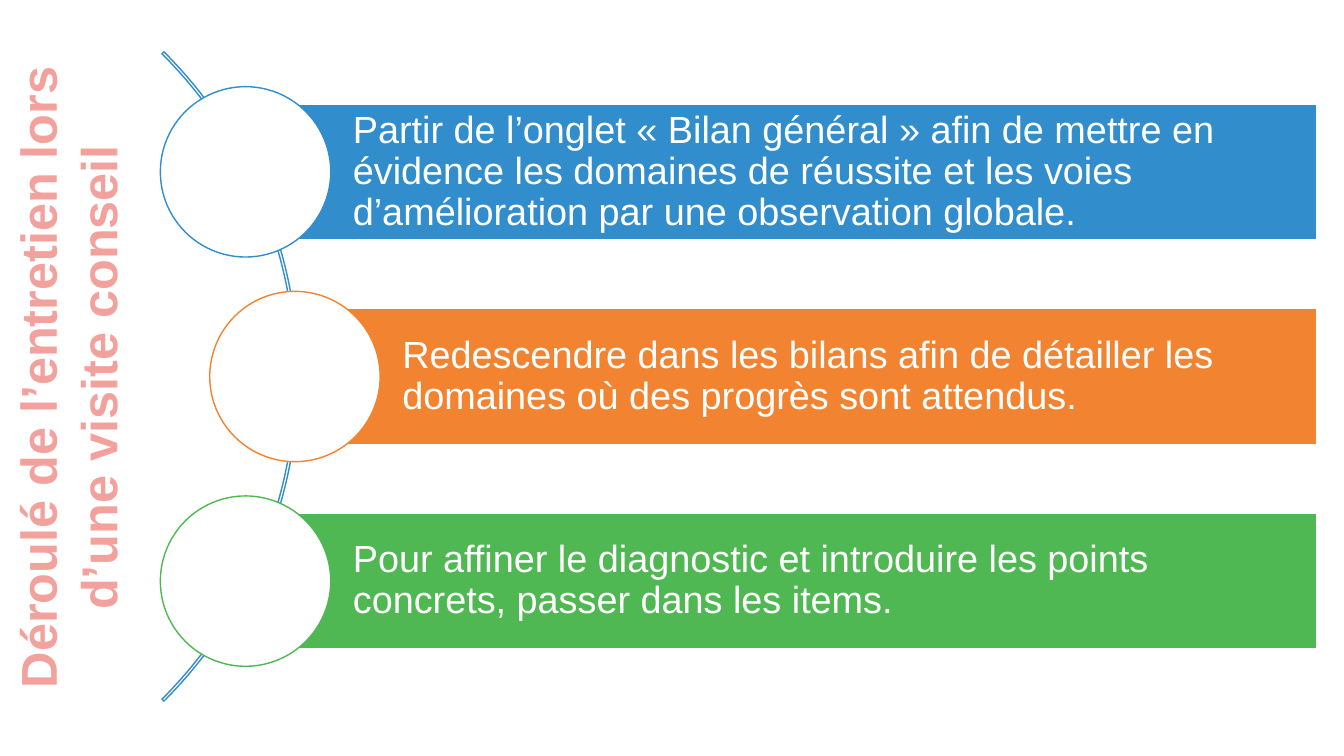
from dataclasses import dataclass

import pptx
import pptx.dml.color
import pptx.enum.shapes
import pptx.enum.text
import pptx.util

SHAPE = pptx.enum.shapes.MSO_SHAPE
ALIGN = pptx.enum.text.PP_ALIGN
ANCHOR = pptx.enum.text.MSO_ANCHOR
EMU_PER_PX = 9144  # 100 px to the inch


@dataclass(frozen=True)
class Theme:
    font: str = "Arial"
    white: str = "FFFFFF"
    title: str = "F3A19D"
    blue: str = "318DCB"
    orange: str = "F28330"
    green: str = "50B852"
    title_size: int = 36
    step_size: int = 27
    line_width: int = 1


def px(length):
    return pptx.util.Emu(length * EMU_PER_PX)


def rgb(colour):
    return pptx.dml.color.RGBColor.from_string(colour)


class SlideBuilder:
    def __init__(self, presentation, theme):
        self.theme = theme
        self.slide = presentation.slides.add_slide(presentation.slide_layouts[6])

    def set_text(self, frame, text, *, size, colour, bold=False, align=ALIGN.LEFT,
                 anchor=ANCHOR.TOP, line_spacing=None, margins=(10, 5, 10, 5)):
        """Fill a text frame; margins run left, top, right, bottom."""
        frame.word_wrap = True
        frame.vertical_anchor = anchor
        (frame.margin_left, frame.margin_top,
         frame.margin_right, frame.margin_bottom) = map(px, margins)
        paragraph = frame.paragraphs[0]
        paragraph.alignment = align
        if line_spacing:
            paragraph.line_spacing = line_spacing
        run = paragraph.add_run()
        run.text = text
        run.font.name = self.theme.font
        run.font.size = pptx.util.Pt(size)
        run.font.bold = bold
        run.font.color.rgb = rgb(colour)

    def shape(self, kind, left, top, width, height, *, line, fill=None):
        shape = self.slide.shapes.add_shape(kind, *map(px, (left, top, width, height)))
        shape.shadow.inherit = False
        if fill:
            shape.fill.solid()
            shape.fill.fore_color.rgb = rgb(fill)
        else:
            shape.fill.background()
        shape.line.color.rgb = rgb(line)
        shape.line.width = pptx.util.Pt(self.theme.line_width)
        return shape

    def side_title(self, text, left, top, width, height):
        """Add a title that reads upwards."""
        title = self.slide.shapes.add_textbox(*map(px, (left, top, width, height)))
        title.rotation = 270
        self.set_text(title.text_frame, text, size=self.theme.title_size,
                      colour=self.theme.title, bold=True, align=ALIGN.CENTER)

    def arc(self, left, top, diameter):
        arc = self.shape(SHAPE.BLOCK_ARC, left, top, diameter, diameter,
                         line=self.theme.blue)
        for index, value in enumerate((189, 27, 0.003)):
            arc.adjustments[index] = value

    def step(self, text, colour, left, top):
        """Add a bar up to the right edge and a circle centred on its left end."""
        right, height, diameter = 1306, 135, 169
        bar = self.shape(SHAPE.RECTANGLE, left, top, right - left, height,
                         fill=colour, line=self.theme.white)
        self.set_text(bar.text_frame, text, size=self.theme.step_size,
                      colour=self.theme.white, anchor=ANCHOR.MIDDLE,
                      line_spacing=0.9, margins=(107, 7, 7, 7))
        self.shape(SHAPE.OVAL, left - diameter // 2, top - (diameter - height) // 2,
                   diameter, diameter, fill=self.theme.white, line=colour)


def main():
    presentation = pptx.Presentation()
    presentation.slide_width, presentation.slide_height = px(1333), px(750)
    theme = Theme()
    builder = SlideBuilder(presentation, theme)

    builder.side_title("Déroulé de l’entretien lors d’une visite conseil",
                       -308, 309, 750, 131)
    builder.arc(-615, -82, 911)

    steps = (
        ("Partir de l’onglet « Bilan général » afin de mettre en évidence les "
         "domaines de réussite et les voies d’amélioration par une observation "
         "globale.", theme.blue, 243),
        ("Redescendre dans les bilans afin de détailler les domaines où des "
         "progrès sont attendus.", theme.orange, 292),
        ("Pour affiner le diagnostic et introduire les points concrets, passer "
         "dans les items.", theme.green, 243),
    )
    first_top, pitch = 103, 203
    for row, (text, colour, left) in enumerate(steps):
        builder.step(text, colour, left, first_top + row * pitch)

    presentation.save("out.pptx")


if __name__ == "__main__":
    main()
